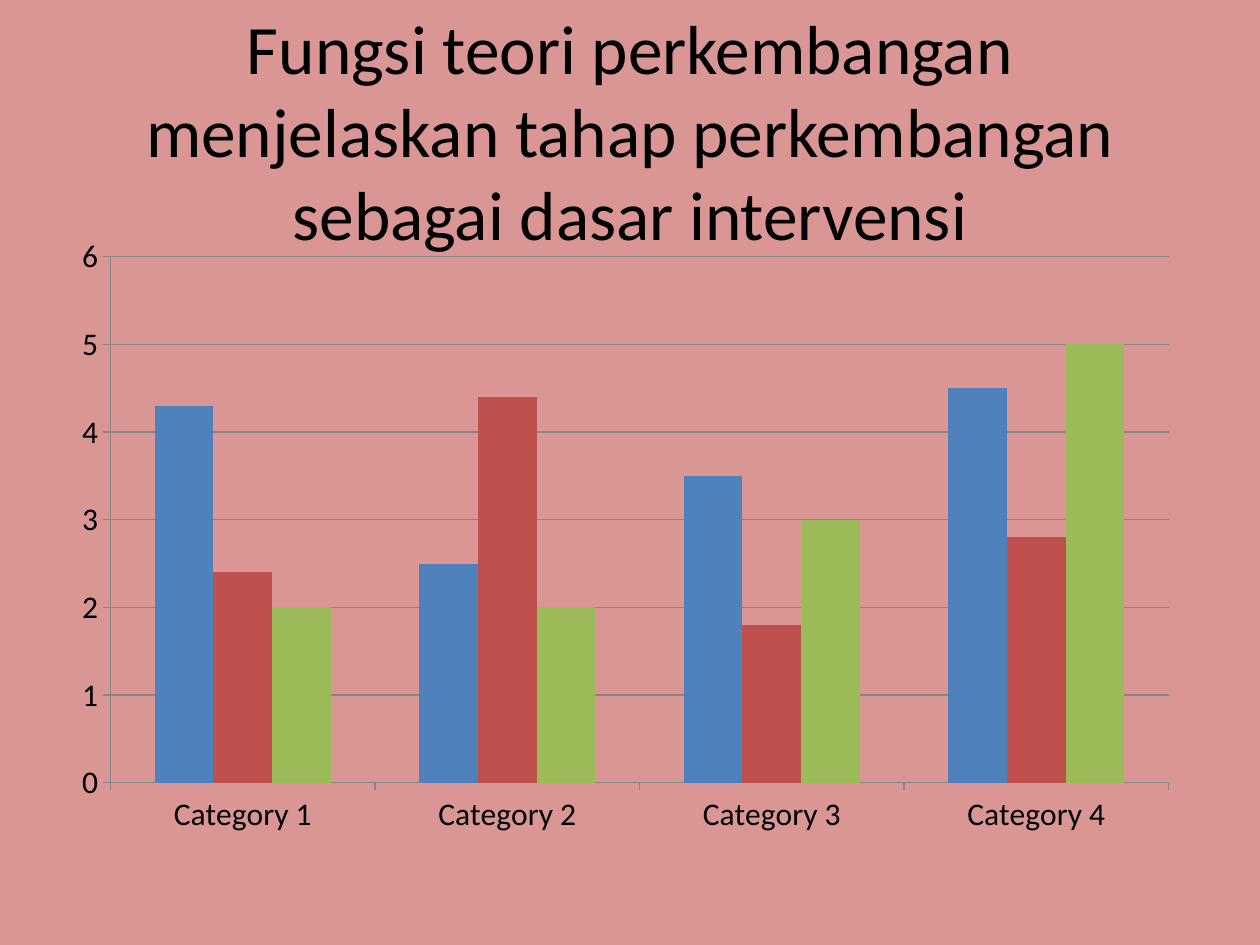
from dataclasses import dataclass

from lxml import etree
from pptx import Presentation
from pptx import util as u
from pptx.chart.data import CategoryChartData
from pptx.dml.color import RGBColor
from pptx.enum import chart as ch, text
from pptx.oxml.ns import qn

PX = 914400 / 126
FONT = "Calibri"
COLORS = {
    "background": "D99694",
    "text": "000000",
    "axis": "868686",
    "blue": "4F81BD",
    "red": "C0504D",
    "green": "9BBB59",
}
TITLE_LINES = [
    "Fungsi teori perkembangan",
    "menjelaskan tahap perkembangan",
    "sebagai dasar intervensi",
]
CATEGORIES = [f"Category {n}" for n in range(1, 5)]


@dataclass
class Box:
    left: int
    top: int
    width: int
    height: int

    def emu(self) -> list[u.Emu]:
        return [u.Emu(round(v * PX)) for v in (self.left, self.top, self.width, self.height)]


@dataclass
class Series:
    name: str
    values: tuple[float, ...]
    color: str


SERIES = [
    Series("Series 1", (4.3, 2.5, 3.5, 4.5), "blue"),
    Series("Series 2", (2.4, 4.4, 1.8, 2.8), "red"),
    Series("Series 3", (2, 2, 3, 5), "green"),
]


def rgb(name: str) -> RGBColor:
    return RGBColor.from_string(COLORS[name])


def style_font(font, size: float) -> None:
    font.name = FONT
    font.size = u.Pt(size)
    font.color.rgb = rgb("text")


def style_line(line) -> None:
    line.color.rgb = rgb("axis")
    line.width = u.Pt(0.75)


def write_title(title, box: Box) -> None:
    title.left, title.top, title.width, title.height = box.emu()
    frame = title.text_frame
    frame.word_wrap = True
    frame.auto_size = text.MSO_AUTO_SIZE.NONE
    frame.vertical_anchor = text.MSO_ANCHOR.MIDDLE
    paragraph = frame.paragraphs[0]
    paragraph.alignment = text.PP_ALIGN.CENTER
    for index, words in enumerate(TITLE_LINES):
        if index:
            paragraph.add_line_break()
        run = paragraph.add_run()
        run.text = words
        style_font(run.font, 39.6)


def place_plot(chart, **fractions: float) -> None:
    """Fix the inner plot area as fractions of the chart."""
    plot_area = chart.plots[0]._element.getparent()
    layout = plot_area.find(qn("c:layout"))
    if layout is None:
        layout = etree.Element(qn("c:layout"))
        plot_area.insert(0, layout)
    manual = etree.SubElement(layout, qn("c:manualLayout"))
    settings = {"layoutTarget": "inner", "xMode": "edge", "yMode": "edge", **fractions}
    for tag, value in settings.items():
        etree.SubElement(manual, qn(f"c:{tag}")).set("val", str(value))


def draw_chart(slide, box: Box) -> None:
    data = CategoryChartData()
    data.categories = CATEGORIES
    for series in SERIES:
        data.add_series(series.name, series.values)
    chart = slide.shapes.add_chart(ch.XL_CHART_TYPE.COLUMN_CLUSTERED, *box.emu(), data).chart
    chart.has_title = False
    chart.has_legend = False
    style_font(chart.font, 18)
    place_plot(chart, x=0.042, y=0.059, w=0.933, h=0.843)

    # Columns
    plot = chart.plots[0]
    plot.gap_width = 150
    plot.overlap = 0
    plot.vary_by_categories = False
    for columns, series in zip(plot.series, SERIES):
        columns.format.fill.solid()
        columns.format.fill.fore_color.rgb = rgb(series.color)

    # Axes and gridlines
    values = chart.value_axis
    values.minimum_scale, values.maximum_scale, values.major_unit = 0, 6, 1
    values.has_major_gridlines = True
    style_line(values.major_gridlines.format.line)
    for axis in (chart.category_axis, values):
        axis.major_tick_mark = ch.XL_TICK_MARK.OUTSIDE
        style_line(axis.format.line)


def main() -> None:
    prs = Presentation()
    prs.slide_width, prs.slide_height = u.Inches(10), u.Inches(7.5)
    slide = prs.slides.add_slide(prs.slide_layouts[5])
    slide.background.fill.solid()
    slide.background.fill.fore_color.rgb = rgb("background")

    write_title(slide.shapes.title, Box(63, -6, 1134, 271))
    draw_chart(slide, Box(63, 220, 1134, 624))
    prs.save("out.pptx")


if __name__ == "__main__":
    main()
